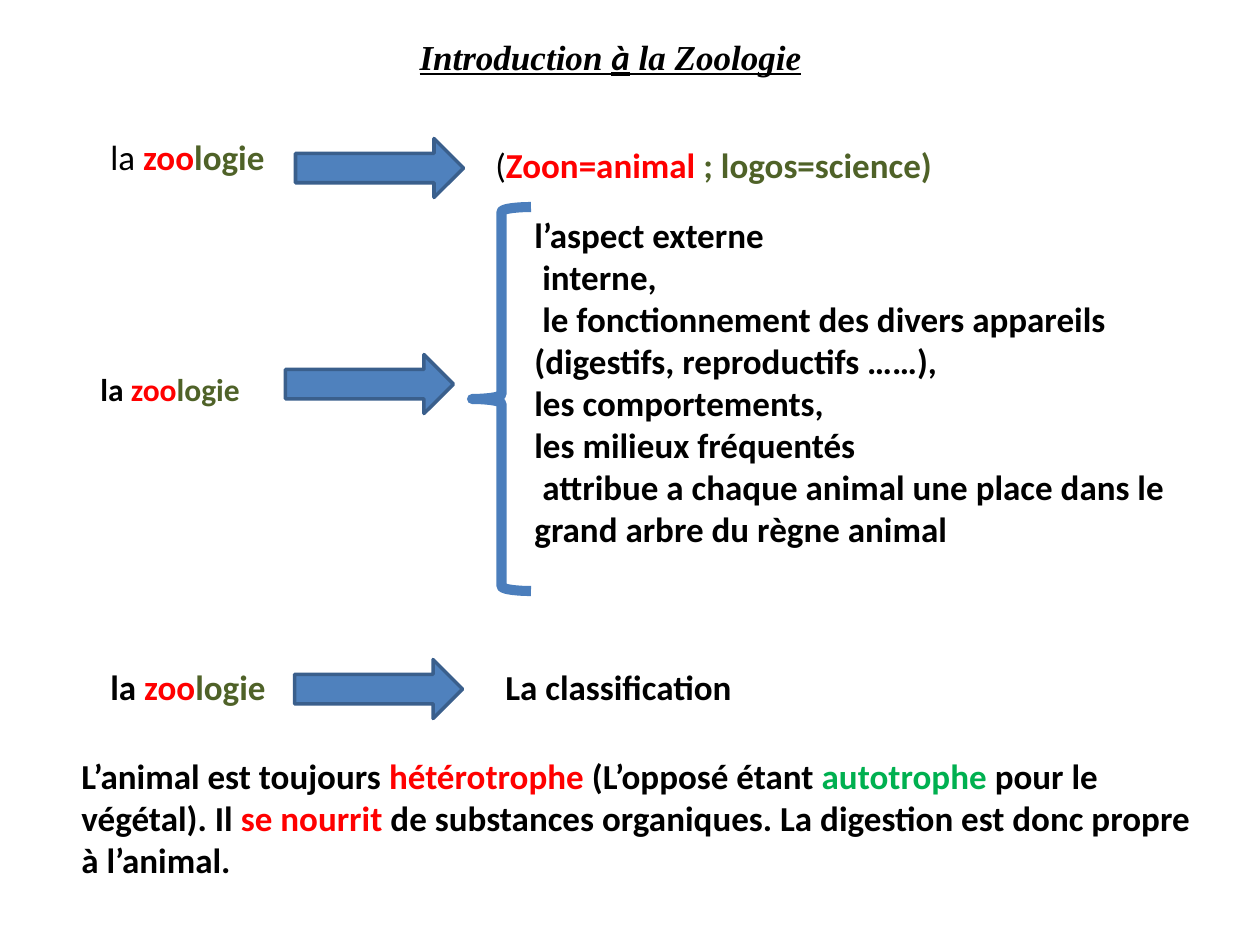
from dataclasses import dataclass

from pptx import Presentation
from pptx.dml.color import RGBColor as RGB
from pptx.enum.shapes import MSO_SHAPE as Shape
from pptx.enum.text import MSO_ANCHOR as Anchor
from pptx.enum.text import MSO_AUTO_SIZE as AutoSize
from pptx.enum.text import PP_ALIGN as Align
from pptx.util import Emu, Pt

PX_PER_INCH = 126


@dataclass(frozen=True)
class Theme:
    black: RGB = RGB(0x00, 0x00, 0x00)
    red: RGB = RGB(0xFF, 0x00, 0x00)
    olive: RGB = RGB(0x4F, 0x62, 0x28)
    green: RGB = RGB(0x00, 0xB0, 0x50)
    arrow_fill: RGB = RGB(0x4F, 0x81, 0xBD)
    arrow_line: RGB = RGB(0x3A, 0x5F, 0x8C)
    brace_line: RGB = RGB(0x4B, 0x7E, 0xBC)
    body_font: str = "Calibri"
    title_font: str = "Times New Roman"
    body_size: int = 20
    small_size: int = 18
    arrow_width: float = 2
    brace_width: float = 5.75


T = Theme()


@dataclass(frozen=True)
class Box:
    left: int
    top: int
    width: int
    height: int

    def emu(self) -> tuple[Emu, ...]:
        sides = (self.left, self.top, self.width, self.height)
        return tuple(px(side) for side in sides)


@dataclass(frozen=True)
class Run:
    text: str
    color: RGB = T.black
    bold: bool = True
    font: str = T.body_font


@dataclass(frozen=True)
class Topic:
    """A "la zoologie" label and the arrow that leads on from it."""
    label: Box
    arrow: Box
    size: int = T.body_size
    article_bold: bool = True


TITLE = [
    Run("Introduction ", font=T.title_font),
    Run("à"),
    Run(" la Zoologie", font=T.title_font),
]
TOPICS = [
    Topic(Box(98, 129, 189, 55), Box(350, 84, 59, 168), article_bold=False),
    Topic(Box(88, 364, 173, 50), Box(340, 300, 59, 168), size=T.small_size),
    Topic(Box(98, 659, 190, 55), Box(349, 605, 59, 168)),
]
ETYMOLOGY = [
    Run("(", bold=False),
    Run("Zoon=animal\u00a0", T.red),
    Run("; logos=science)", T.olive),
]
STUDIED = [
    "l’aspect externe",
    " interne,",
    " le fonctionnement des divers appareils (digestifs, reproductifs\u00a0……),",
    "les comportements,",
    "les milieux fréquentés",
    " attribue a chaque animal une place dans le grand arbre du règne animal",
]
CONCLUSION = [
    Run("L’animal est toujours "),
    Run("hétérotrophe", T.red),
    Run(" (L’opposé étant "),
    Run("autotrophe ", T.green),
    Run("pour le végétal). Il "),
    Run("se nourrit", T.red),
    Run(" de substances organiques. La digestion est donc propre à l’animal."),
]


def px(n: int) -> Emu:
    return Emu(round(n * 914400 / PX_PER_INCH))


def add_text(slide, box: Box, paragraphs: list[list[Run]], *,
             size: int = T.body_size, wrap: bool = True, align=Align.LEFT,
             anchor=Anchor.TOP, italic: bool = False,
             underline: bool = False) -> None:
    tf = slide.shapes.add_textbox(*box.emu()).text_frame
    tf.word_wrap = wrap
    tf.auto_size = AutoSize.SHAPE_TO_FIT_TEXT
    tf.vertical_anchor = anchor
    for i, runs in enumerate(paragraphs):
        p = tf.add_paragraph() if i else tf.paragraphs[0]
        p.alignment = align
        for run in runs:
            r = p.add_run()
            r.text = run.text
            font = r.font
            font.name, font.size = run.font, Pt(size)
            font.bold, font.italic = run.bold, italic
            font.underline = underline
            font.color.rgb = run.color


def add_outlined(slide, kind: Shape, box: Box, color: RGB, width: float):
    sp = slide.shapes.add_shape(kind, *box.emu())
    sp.shadow.inherit = False
    sp.line.color.rgb = color
    sp.line.width = Pt(width)
    return sp


def add_topic(slide, topic: Topic) -> None:
    runs = [Run("la ", bold=topic.article_bold),
            Run("zoo", T.red), Run("logie", T.olive)]
    add_text(slide, topic.label, [runs], size=topic.size, wrap=False)
    arrow = add_outlined(slide, Shape.DOWN_ARROW, topic.arrow,
                         T.arrow_line, T.arrow_width)
    arrow.rotation = 270
    arrow.fill.solid()
    arrow.fill.fore_color.rgb = T.arrow_fill


def add_brace(slide, box: Box) -> None:
    brace = add_outlined(slide, Shape.LEFT_BRACE, box,
                         T.brace_line, T.brace_width)
    brace.fill.background()
    brace.adjustments[0] = 0.08
    brace.adjustments[1] = 0.5


def main() -> None:
    prs = Presentation()
    prs.slide_width, prs.slide_height = px(1260), px(945)
    slide = prs.slides.add_slide(prs.slide_layouts[6])

    add_text(slide, Box(276, 29, 669, 55), [TITLE], align=Align.CENTER,
             anchor=Anchor.MIDDLE, italic=True, underline=True)
    for topic in TOPICS:
        add_topic(slide, topic)
    add_text(slide, Box(483, 137, 466, 55), [ETYMOLOGY], wrap=False)
    add_text(slide, Box(522, 207, 659, 352), [[Run(item)] for item in STUDIED])
    add_brace(slide, Box(472, 207, 59, 384))
    add_text(slide, Box(493, 659, 630, 55), [[Run("La classification")]])
    add_text(slide, Box(69, 748, 1142, 140), [CONCLUSION])

    prs.save("out.pptx")


if __name__ == "__main__":
    main()
